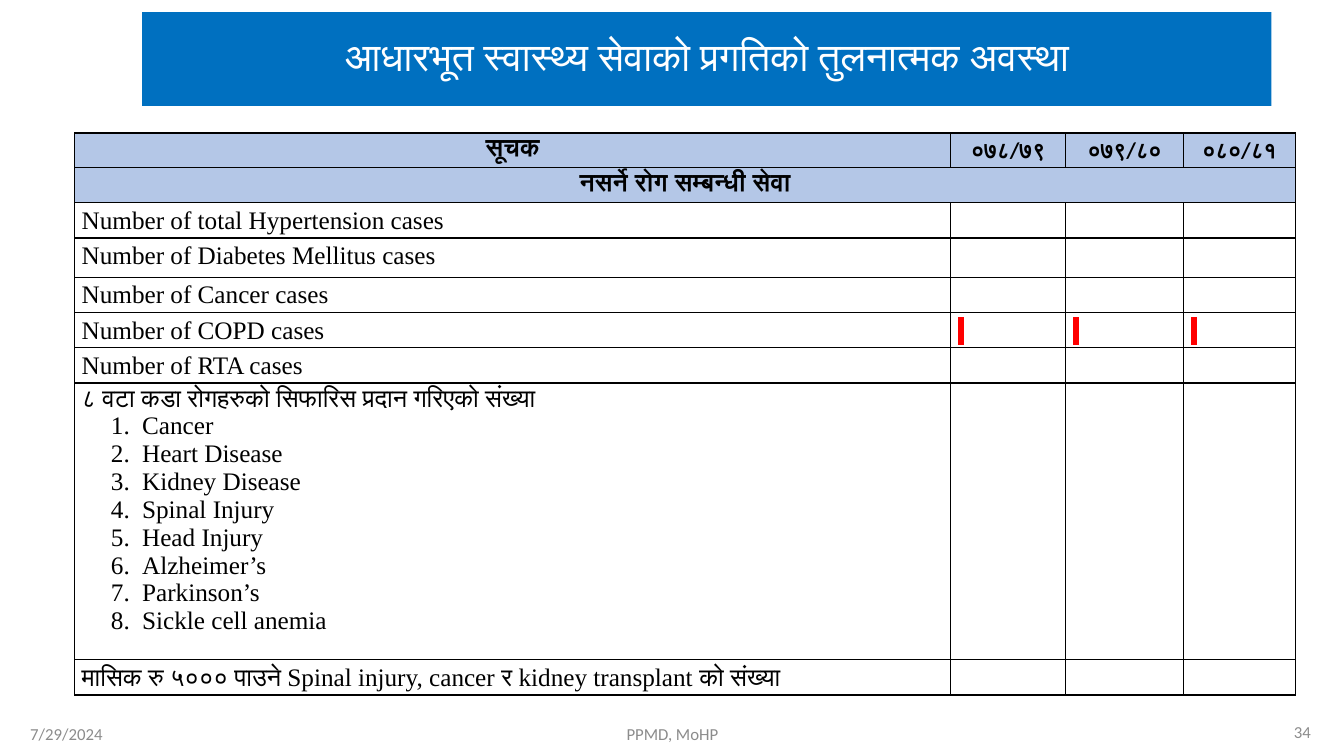
from dataclasses import dataclass

import pptx
import pptx.dml.color
import pptx.enum.text
import pptx.oxml.ns
import pptx.util
from lxml import etree

Inches = pptx.util.Inches
Align = pptx.enum.text.PP_ALIGN
Anchor = pptx.enum.text.MSO_ANCHOR


@dataclass(frozen=True)
class Theme:
    banner: str = "0070C0"
    header: str = "B4C7E7"
    ink: str = "000000"
    light: str = "FFFFFF"
    muted: str = "8C8C8C"
    mark: str = "FF0000"
    title_size: int = 28
    body_size: int = 18
    year_size: int = 16
    footer_size: int = 12
    title_font: str = "Arial"
    header_font: str = "Calibri"
    body_font: str = "Times New Roman"


@dataclass(frozen=True)
class Footer:
    text: str
    left: float
    top: float
    width: float
    align: Align


THEME = Theme()
TITLE = "आधारभूत स्वास्थ्य सेवाको प्रगतिको तुलनात्मक अवस्था"
FOOTERS = [
    Footer("7/29/2024", 0.2, 7.18, 3, Align.LEFT),
    Footer("PPMD, MoHP", 4.42, 7.18, 4.5, Align.CENTER),
    Footer("34", 10.1, 7.16, 3, Align.RIGHT),
]
HEADINGS = ["सूचक", "०७८/७९", "०७९/८०", "०८०/८१"]
SECTION = "नसर्ने रोग सम्बन्धी सेवा"
MARKED = "Number of COPD cases"
DISEASE_HEADING = "८ वटा कडा रोगहरुको सिफारिस प्रदान गरिएको संख्या"
INDICATORS = [
    "Number of total Hypertension cases",
    "Number of Diabetes Mellitus cases",
    "Number of Cancer cases",
    MARKED,
    "Number of RTA cases",
    DISEASE_HEADING,
    "मासिक रु ५००० पाउने Spinal injury, cancer र kidney transplant को संख्या",
]
DISEASES = ["Cancer", "Heart Disease", "Kidney Disease", "Spinal Injury",
            "Head Injury", "Alzheimer’s", "Parkinson’s", "Sickle cell anemia"]
COLUMN_WIDTHS = [8.69, 1.14, 1.17, 1.11]
ROW_HEIGHTS = [0.32, 0.34, 0.35, 0.39, 0.35, 0.35, 0.35, 2.5, 0.35]


def color(value: str) -> pptx.dml.color.RGBColor:
    return pptx.dml.color.RGBColor.from_string(value)


def add_node(parent, tag: str, **attributes: str):
    return etree.SubElement(parent, pptx.oxml.ns.qn(tag), attributes)


def add_span(para, text: str, size: int, font: str, ink: str, bold: bool = False):
    span = para.add_run()
    span.text = text
    span.font.size = pptx.util.Pt(size)
    span.font.name = font
    span.font.bold = bold
    span.font.color.rgb = color(ink)
    return span


def add_title(page) -> None:
    box = page.shapes.title
    box.left, box.top = Inches(1.41), Inches(0.12)
    box.width, box.height = Inches(11.2), Inches(0.93)
    box.fill.solid()
    box.fill.fore_color.rgb = color(THEME.banner)
    frame = box.text_frame
    frame.auto_size = pptx.enum.text.MSO_AUTO_SIZE.NONE
    frame.vertical_anchor = Anchor.MIDDLE
    para = frame.paragraphs[0]
    para.alignment = Align.CENTER
    para.line_spacing = 0.9
    add_span(para, TITLE, THEME.title_size, THEME.title_font, THEME.light)


def add_footer(page, footer: Footer) -> None:
    box = page.shapes.add_textbox(Inches(footer.left), Inches(footer.top),
                                  Inches(footer.width), Inches(0.2))
    frame = box.text_frame
    frame.word_wrap = True
    frame.vertical_anchor = Anchor.MIDDLE
    para = frame.paragraphs[0]
    para.alignment = footer.align
    add_span(para, footer.text, THEME.footer_size, THEME.header_font, THEME.muted)


def style_cell(cell, is_header: bool) -> None:
    """Set the insets, the black 1 pt border and the fill."""
    cell.margin_left = cell.margin_right = Inches(0.07)
    cell.margin_top = cell.margin_bottom = 0
    properties = cell._tc.get_or_add_tcPr()
    for side in ("a:lnL", "a:lnR", "a:lnT", "a:lnB"):
        line = add_node(properties, side, w=str(pptx.util.Pt(1)))
        add_node(add_node(line, "a:solidFill"), "a:srgbClr", val=THEME.ink)
    if is_header:
        cell.fill.solid()
        cell.fill.fore_color.rgb = color(THEME.header)
    else:
        cell.fill.background()


def write_heading(cell, text: str, size: int) -> None:
    para = cell.text_frame.paragraphs[0]
    para.alignment = Align.CENTER
    para.line_spacing = 1.15
    add_span(para, text, size, THEME.header_font, THEME.ink, bold=True)


def write_body(para, text: str):
    return add_span(para, text, THEME.body_size, THEME.body_font, THEME.ink)


def write_diseases(cell) -> None:
    for disease in DISEASES:
        para = cell.text_frame.add_paragraph()
        properties = para._p.get_or_add_pPr()
        properties.set("marL", str(Inches(0.6)))
        properties.set("indent", str(Inches(-0.31)))
        add_node(properties, "a:buFont", typeface="+mj-lt")
        add_node(properties, "a:buAutoNum", type="arabicPeriod")
        write_body(para, disease)


def mark_cell(cell) -> None:
    """Show a narrow highlighted bar at the start of the cell."""
    para = cell.text_frame.paragraphs[0]
    para.line_spacing = 1.15
    span = write_body(para, " ")
    highlight = etree.Element(pptx.oxml.ns.qn("a:highlight"))
    add_node(highlight, "a:srgbClr", val=THEME.mark)
    span.font._element.find(pptx.oxml.ns.qn("a:solidFill")).addnext(highlight)


def add_indicator_table(page) -> None:
    table = page.shapes.add_table(
        len(ROW_HEIGHTS), len(COLUMN_WIDTHS), Inches(0.74), Inches(1.32),
        Inches(sum(COLUMN_WIDTHS)), Inches(sum(ROW_HEIGHTS))).table
    table.first_row = table.horz_banding = False
    for column, width in zip(table.columns, COLUMN_WIDTHS):
        column.width = Inches(width)
    for index, (row, height) in enumerate(zip(table.rows, ROW_HEIGHTS)):
        row.height = Inches(height)
        for cell in row.cells:
            style_cell(cell, is_header=index < 2)

    for index, heading in enumerate(HEADINGS):
        size = THEME.year_size if index else THEME.body_size
        write_heading(table.cell(0, index), heading, size)
    table.cell(1, 0).merge(table.cell(1, len(HEADINGS) - 1))
    write_heading(table.cell(1, 0), SECTION, THEME.body_size)

    for index, indicator in enumerate(INDICATORS, start=2):
        cell = table.cell(index, 0)
        para = cell.text_frame.paragraphs[0]
        para.line_spacing = 1.15
        write_body(para, indicator)
        if indicator == DISEASE_HEADING:
            write_diseases(cell)
        elif indicator == MARKED:
            for year in range(1, len(HEADINGS)):
                mark_cell(table.cell(index, year))


def main() -> None:
    deck = pptx.Presentation()
    deck.slide_width, deck.slide_height = Inches(13.33), Inches(7.5)
    page = deck.slides.add_slide(deck.slide_layouts[5])
    add_title(page)
    for footer in FOOTERS:
        add_footer(page, footer)
    add_indicator_table(page)
    deck.save("out.pptx")


if __name__ == "__main__":
    main()
